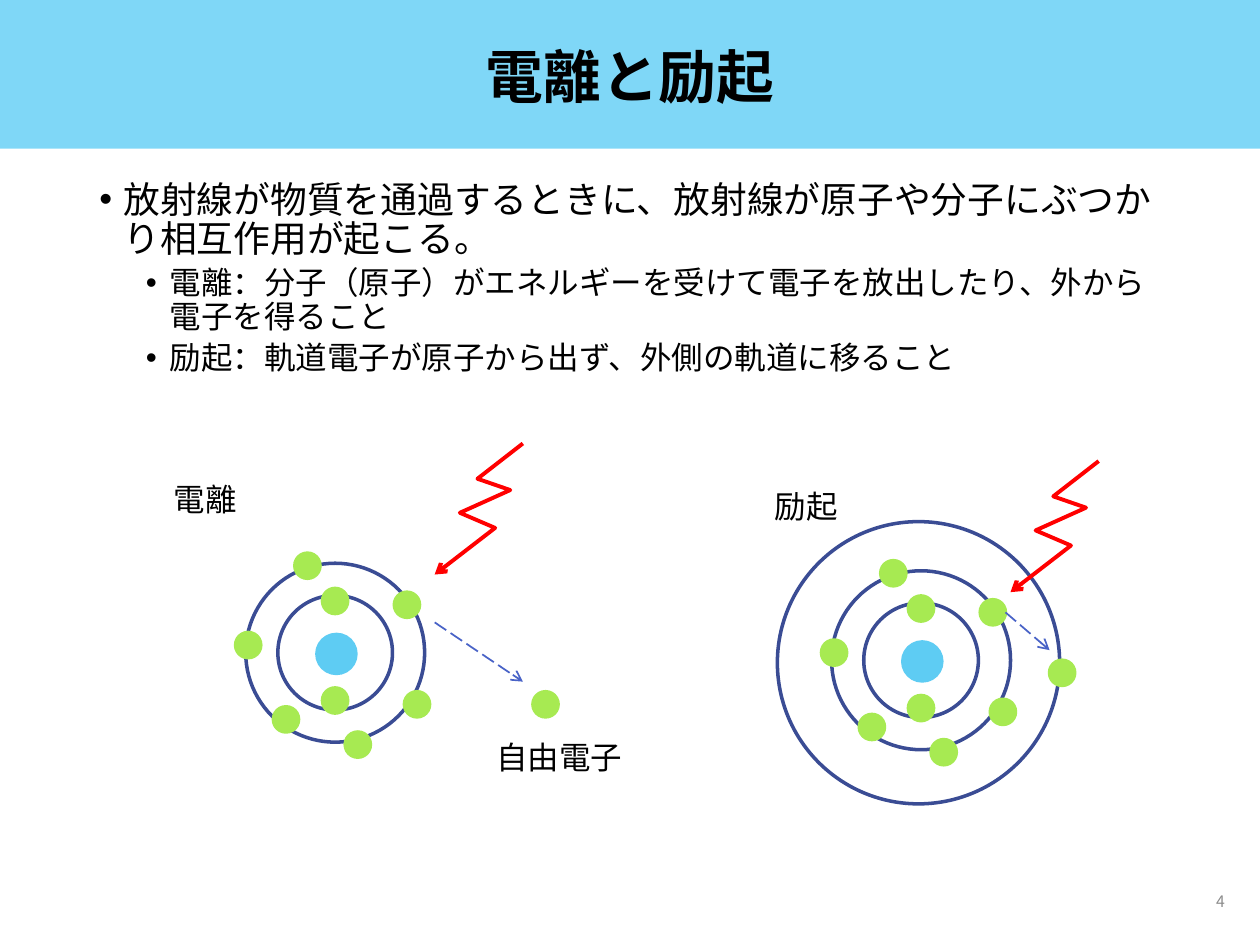
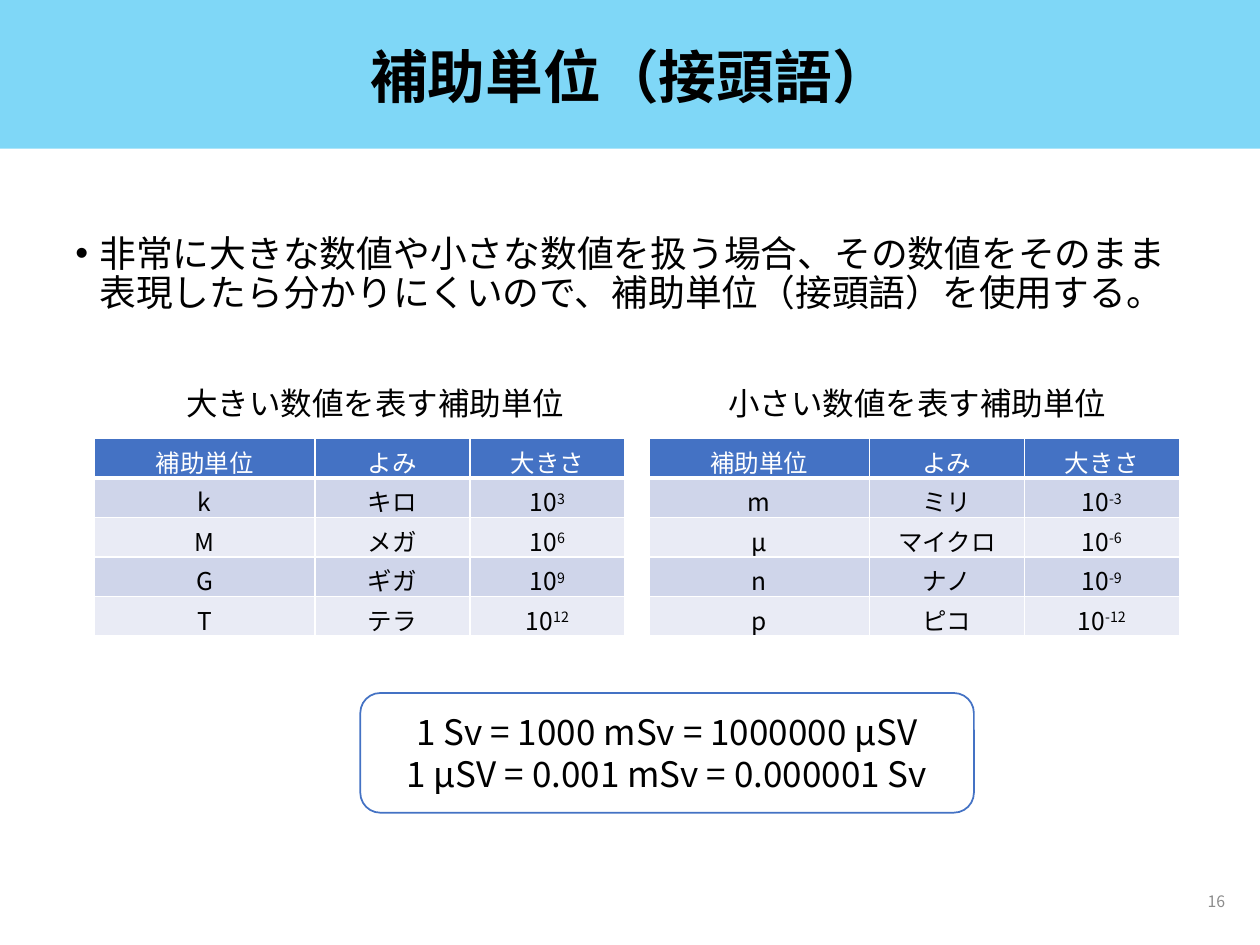
from dataclasses import dataclass

from lxml import etree
from pptx import Presentation
from pptx.dml.color import RGBColor
from pptx.enum.dml import MSO_LINE
from pptx.enum.shapes import MSO_CONNECTOR, MSO_SHAPE
from pptx.enum.text import MSO_ANCHOR, PP_ALIGN
from pptx.oxml.ns import qn
from pptx.util import Inches, Pt

LEFT, CENTER, RIGHT = PP_ALIGN.LEFT, PP_ALIGN.CENTER, PP_ALIGN.RIGHT
TOP, MIDDLE = MSO_ANCHOR.TOP, MSO_ANCHOR.MIDDLE
RECT, OVAL, ROUNDED = MSO_SHAPE.RECTANGLE, MSO_SHAPE.OVAL, MSO_SHAPE.ROUNDED_RECTANGLE
STRAIGHT = MSO_CONNECTOR.STRAIGHT
LONG_DASH = MSO_LINE.LONG_DASH


@dataclass(frozen=True)
class Theme:
    font: str = "Noto Sans CJK JP"
    label_font: str = "Arial"
    black: str = "000000"
    white: str = "FFFFFF"
    band: str = "00B0F0"
    page: str = "8C8C8C"
    orbit: str = "3A4C94"
    nucleus: str = "5ECCF3"
    electron: str = "A7EA52"
    ray: str = "FF0000"
    jump: str = "4963C7"
    accent: str = "4472C4"
    row_fills: tuple = ("CFD5EA", "E9EBF5")
    title_size: float = 33
    body_sizes: tuple = (21, 18)
    label_size: float = 18
    formula_size: float = 20
    cell_size: float = 14
    page_size: float = 9


THEME = Theme()

ORBIT_RADII = (0.71, 0.455)
NUCLEUS_RADIUS = 0.155
ELECTRON_RADIUS = 0.1
ELECTRON_OFFSETS = (
    (0, -0.41), (0, 0.38), (0.57, -0.38), (-0.39, 0.53),
    (0.65, 0.41), (-0.69, -0.06), (0.18, 0.73), (-0.22, -0.69),
)
RAY_OFFSETS = ((0.7, -1.04), (0.34, -0.76), (0.6, -0.67), (0.2, -0.49), (0.48, -0.37), (0, 0))
TABLE_HEADER = ("補助単位", "よみ", "大きさ")
COLUMN_WIDTHS = (1.75, 1.23, 1.23)
ROW_HEIGHT = 0.31
LARGE_PREFIXES = (("k", "キロ", "3"), ("M", "メガ", "6"), ("G", "ギガ", "9"), ("T", "テラ", "12"))
SMALL_PREFIXES = (("m", "ミリ", "-3"), ("µ", "マイクロ", "-6"), ("n", "ナノ", "-9"), ("p", "ピコ", "-12"))


def rgb(color):
    return RGBColor.from_string(color)


def style_paragraph(paragraph, size, color=THEME.black, align=LEFT, bold=False, font=THEME.font):
    paragraph.alignment = align
    paragraph.font.size = Pt(size)
    paragraph.font.bold = bold
    paragraph.font.name = font
    paragraph.font.color.rgb = rgb(color)
    properties = paragraph._p.pPr.find(qn("a:defRPr"))
    etree.SubElement(properties, qn("a:ea"), typeface=THEME.font)


def add_text(slide, box, text, size, anchor=TOP, wrap=True, **style):
    frame = slide.shapes.add_textbox(*map(Inches, box)).text_frame
    frame.word_wrap = wrap
    frame.vertical_anchor = anchor
    paragraph = frame.paragraphs[0]
    paragraph.text = text
    style_paragraph(paragraph, size, **style)
    return paragraph


def add_shape(slide, kind, box, fill=None, line=None, width=1):
    shape = slide.shapes.add_shape(kind, *map(Inches, box))
    shape.shadow.inherit = False
    if fill:
        shape.fill.solid()
        shape.fill.fore_color.rgb = rgb(fill)
    else:
        shape.fill.background()
    if line:
        shape.line.color.rgb = rgb(line)
        shape.line.width = Pt(width)
    else:
        shape.line.fill.background()
    return shape


def add_circle(slide, x, y, radius, line, fill=None):
    box = (x - radius, y - radius, 2 * radius, 2 * radius)
    add_shape(slide, OVAL, box, fill, line, 2)


def add_electron(slide, x, y):
    add_circle(slide, x, y, ELECTRON_RADIUS, THEME.electron, THEME.electron)


def add_atom(slide, x, y):
    for radius in ORBIT_RADII:
        add_circle(slide, x, y, radius, THEME.orbit)
    add_circle(slide, x + 0.01, y + 0.01, NUCLEUS_RADIUS, THEME.nucleus, THEME.nucleus)
    for dx, dy in ELECTRON_OFFSETS:
        add_electron(slide, x + dx, y + dy)


def add_arrowhead(line):
    etree.SubElement(line._get_or_add_ln(), qn("a:tailEnd"), type="arrow")


def add_ray(slide, x, y):
    points = [(Inches(x + dx), Inches(y + dy)) for dx, dy in RAY_OFFSETS]
    builder = slide.shapes.build_freeform(*points[0])
    builder.add_line_segments(points[1:], close=False)
    ray = builder.convert_to_shape()
    ray.shadow.inherit = False
    ray.fill.background()
    ray.line.color.rgb = rgb(THEME.ray)
    ray.line.width = Pt(2.25)
    add_arrowhead(ray.line)


def add_jump(slide, start, end):
    jump = slide.shapes.add_connector(STRAIGHT, *map(Inches, start + end))
    jump.line.color.rgb = rgb(THEME.jump)
    jump.line.width = Pt(1)
    jump.line.dash_style = LONG_DASH
    add_arrowhead(jump.line)
    etree.SubElement(jump._element.spPr, qn("a:effectLst"))


def add_label(slide, x, y, width, text, font=THEME.label_font):
    add_text(slide, (x, y, width, 0.4), text, THEME.label_size, wrap=False, font=font)


def add_bullets(slide, box, items):
    frame = slide.shapes.add_textbox(*map(Inches, box)).text_frame
    frame.word_wrap = True
    for index, (level, text) in enumerate(items):
        paragraph = frame.add_paragraph() if index else frame.paragraphs[0]
        paragraph.text = text
        paragraph.level = level
        paragraph.line_spacing = 0.9
        paragraph.space_before = Pt((7.5, 3.8)[level])
        properties = paragraph._p.get_or_add_pPr()
        properties.set("marL", str(Inches((0.19, 0.56)[level])))
        properties.set("indent", str(Inches(-0.19)))
        etree.SubElement(properties, qn("a:buFont"), typeface="Arial")
        etree.SubElement(properties, qn("a:buChar"), char="•")
        style_paragraph(paragraph, THEME.body_sizes[level])


def add_cell_borders(cell, bottom_width):
    properties = cell._tc.get_or_add_tcPr()
    for side, width in (("L", 1), ("R", 1), ("T", 1), ("B", bottom_width)):
        border = etree.SubElement(properties, qn(f"a:ln{side}"), w=str(Pt(width)))
        fill = etree.SubElement(border, qn("a:solidFill"))
        etree.SubElement(fill, qn("a:srgbClr"), val=THEME.white)


def fill_cell(cell, text, fill, color, bottom_width=1, exponent=None):
    add_cell_borders(cell, bottom_width)
    cell.fill.solid()
    cell.fill.fore_color.rgb = rgb(fill)
    cell.margin_left = cell.margin_right = Inches(0.1)
    cell.margin_top = cell.margin_bottom = Inches(0.04)
    paragraph = cell.text_frame.paragraphs[0]
    paragraph.add_run().text = text
    if exponent:
        power = paragraph.add_run()
        power.text = exponent
        power._r.get_or_add_rPr().set("baseline", "30000")
    style_paragraph(paragraph, THEME.cell_size, color, CENTER)


def add_prefix_table(slide, x, y, prefixes):
    rows = len(prefixes) + 1
    box = (x, y, sum(COLUMN_WIDTHS), rows * ROW_HEIGHT)
    table = slide.shapes.add_table(rows, len(COLUMN_WIDTHS), *map(Inches, box)).table
    for column, width in zip(table.columns, COLUMN_WIDTHS):
        column.width = Inches(width)
    for column, heading in enumerate(TABLE_HEADER):
        fill_cell(table.cell(0, column), heading, THEME.accent, THEME.white, bottom_width=3)
    for row, (symbol, reading, exponent) in enumerate(prefixes, start=1):
        fill = THEME.row_fills[(row - 1) % 2]
        fill_cell(table.cell(row, 0), symbol, fill, THEME.black)
        fill_cell(table.cell(row, 1), reading, fill, THEME.black)
        fill_cell(table.cell(row, 2), "10", fill, THEME.black, exponent=exponent)


def add_formula_box(slide, box, formulas):
    frame = add_shape(slide, ROUNDED, box, THEME.white, THEME.accent).text_frame
    frame.vertical_anchor = MIDDLE
    for index, formula in enumerate(formulas):
        paragraph = frame.add_paragraph() if index else frame.paragraphs[0]
        paragraph.text = formula
        style_paragraph(paragraph, THEME.formula_size, align=CENTER)


def add_base_slide(deck, title, page):
    slide = deck.slides.add_slide(deck.slide_layouts[6])
    band = add_shape(slide, RECT, (0, 0, 10, 1.18), THEME.band)
    band_color = band._element.spPr.find(f".//{qn('a:srgbClr')}")
    etree.SubElement(band_color, qn("a:alpha"), val="50000")
    heading = add_text(slide, (0.69, 0.21, 8.62, 0.85), title, THEME.title_size,
                       MIDDLE, align=CENTER, bold=True)
    heading.line_spacing = 0.9
    add_text(slide, (7.57, 6.95, 2.25, 0.4), page, THEME.page_size,
             MIDDLE, color=THEME.page, align=RIGHT)
    return slide


def build_ionization(deck):
    slide = add_base_slide(deck, "電離と励起", "4")
    add_bullets(slide, (0.69, 1.39, 8.62, 5.36), (
        (0, "放射線が物質を通過するときに、放射線が原子や分子にぶつかり相互作用が起こる。"),
        (1, "電離：分子（原子）がエネルギーを受けて電子を放出したり、外から電子を得ること"),
        (1, "励起：軌道電子が原子から出ず、外側の軌道に移ること"),
    ))
    add_atom(slide, 2.66, 5.18)
    add_electron(slide, 4.33, 5.59)
    add_ray(slide, 3.45, 4.56)
    add_jump(slide, (3.45, 4.94), (4.15, 5.41))
    add_label(slide, 1.28, 3.76, 0.71, "電離")
    add_label(slide, 3.84, 5.81, 1.21, "自由電子")

    add_atom(slide, 7.31, 5.24)
    add_jump(slide, (7.98, 4.86), (8.33, 5.16))
    add_label(slide, 6.05, 3.82, 0.71, "励起")
    add_circle(slide, 7.29, 5.26, 1.12, THEME.orbit)
    add_electron(slide, 8.43, 5.34)
    add_ray(slide, 8.02, 4.7)


def build_prefixes(deck):
    slide = add_base_slide(deck, "補助単位（接頭語）", "16")
    add_bullets(slide, (0.5, 1.82, 9, 1.17), (
        (0, "非常に大きな数値や小さな数値を扱う場合、その数値をそのまま表現したら分かりにくいので、補助単位（接頭語）を使用する。"),
    ))
    add_prefix_table(slide, 0.75, 3.48, LARGE_PREFIXES)
    add_prefix_table(slide, 5.15, 3.48, SMALL_PREFIXES)
    add_label(slide, 1.38, 3, 3.23, "大きい数値を表す補助単位", THEME.font)
    add_label(slide, 5.68, 3, 3.23, "小さい数値を表す補助単位", THEME.font)
    add_formula_box(slide, (2.86, 5.5, 4.87, 0.95), (
        "1 Sv = 1000 mSv = 1000000 µSV",
        "1 µSV = 0.001 mSv = 0.000001 Sv",
    ))


def main():
    deck = Presentation()
    deck.slide_width, deck.slide_height = Inches(10), Inches(7.5)
    build_ionization(deck)
    build_prefixes(deck)
    deck.save("out.pptx")


if __name__ == "__main__":
    main()
